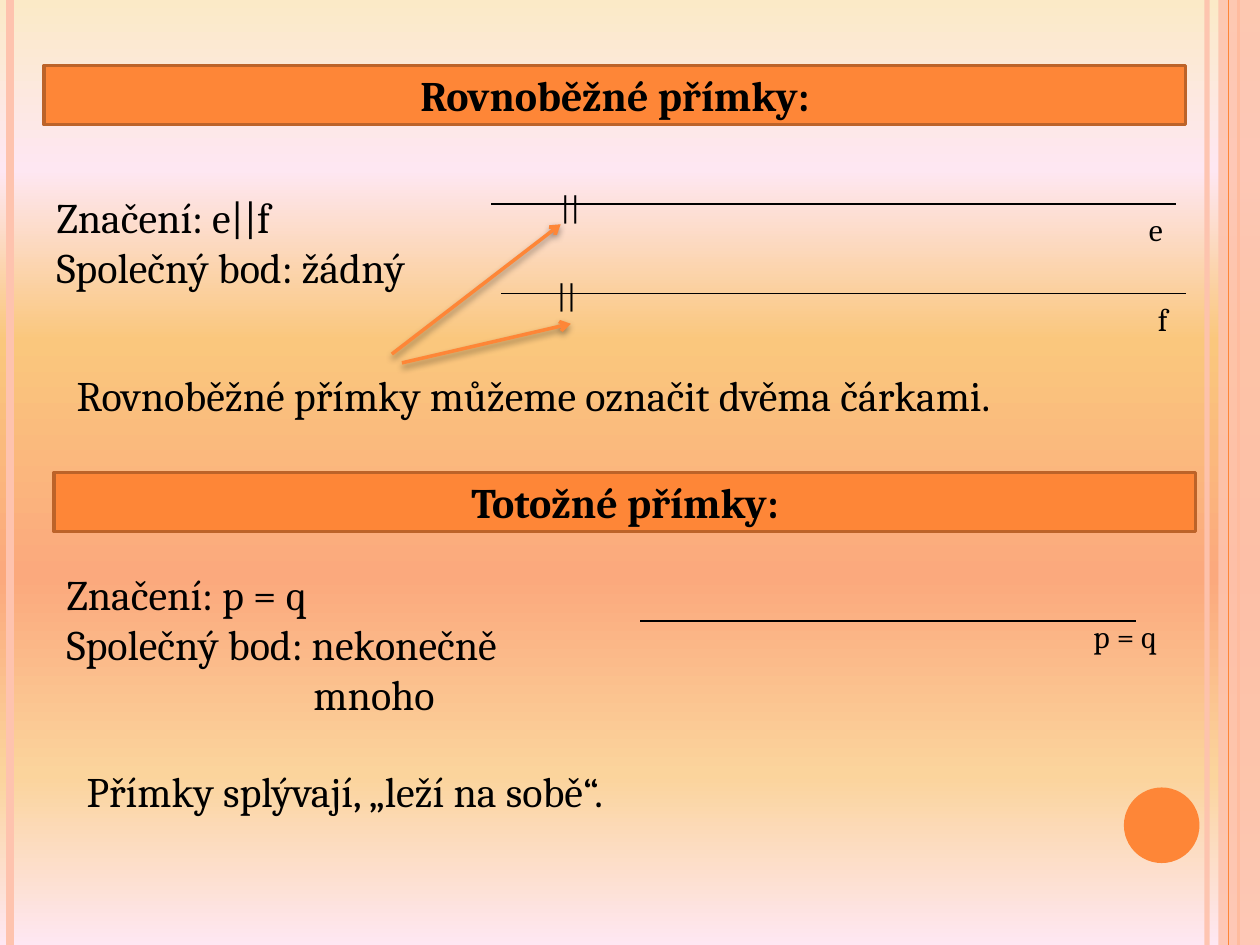
from lxml import etree
from pptx import Presentation
from pptx.dml.color import RGBColor
from pptx.enum.shapes import MSO_CONNECTOR, MSO_SHAPE
from pptx.enum.text import MSO_ANCHOR, PP_ALIGN
from pptx.oxml.ns import qn
from pptx.util import Inches, Pt

STRAIGHT = MSO_CONNECTOR.STRAIGHT
RECT, OVAL = MSO_SHAPE.RECTANGLE, MSO_SHAPE.OVAL
FONT = "Cambria"
ORANGE, PEACH, BROWN, BLACK = "FE8637", "FEC3AE", "BC6329", "000000"
WIDTH, HEIGHT = 10, 7.5

BACKGROUND = [(0, "FBEAC7", 100), (18, "FEE7F2", 100), (36, "FAC77D", 100),
              (61, "FBA97D", 100), (82, "FBD49C", 100), (100, "FEE7F2", 97)]
OUTER_STRIPES = [(9.58, PEACH, 3, 93), (0.08, PEACH, 4.5, 100), (9.83, ORANGE, 1.5, 100)]
INNER_STRIPE = (9.75, ORANGE, 0.75, 100)
HEADERS = [(0.35, 0.52, "Rovnoběžné přímky:"), (0.43, 3.75, "Totožné přímky:")]
LINES = [(3.9, 9.33, 1.62), (3.98, 9.41, 2.33), (5.08, 9.02, 4.93)]
ARROWS = [(3.11, 2.81, 4.45, 1.78), (3.19, 2.88, 4.53, 2.57)]
LABELS = [(4.32, 2.14, 0.63, "||"), (4.35, 1.44, 0.63, "||"), (9.02, 1.62, 0.39, "e"),
          (9.09, 2.33, 0.39, "f"), (8.58, 4.85, 1.42, "p = q")]
NOTES = [
    (0.35, 1.47, 3.31, 0.91, [("Značení: e||f", 0), ("Společný bod: žádný", 0)]),
    (0.51, 2.88, 8.74, 0.5, [("Rovnoběžné přímky můžeme označit dvěma čárkami.", 0)]),
    (0.43, 4.46, 4.17, 1.31, [("Značení: p = q", 0), ("Společný bod: nekonečně", 0),
                              ("mnoho", 1.96)]),
    (0.59, 6.03, 8.74, 0.5, [("Přímky splývají, „leží na sobě“.", 0)]),
]


def rgb(color):
    return RGBColor.from_string(color)


def child(parent, tag, **attrs):
    return etree.SubElement(parent, qn(tag), {k: str(v) for k, v in attrs.items()})


def set_alpha(element, percent):
    if percent < 100:
        child(next(element.iter(qn("a:srgbClr"))), "a:alpha", val=percent * 1000)


def paint_background(s):
    fill = s.background.fill
    fill.gradient()
    fill.gradient_angle = 270
    stops = next(s.element.iter(qn("a:gsLst")))
    for stop in list(stops):
        stops.remove(stop)
    for pos, color, alpha in BACKGROUND:
        stop = child(stops, "a:gs", pos=pos * 1000)
        child(stop, "a:srgbClr", val=color)
        set_alpha(stop, alpha)


def add_line(s, x1, y1, x2, y2, color, width, alpha=100, arrow=False):
    sp = s.shapes.add_connector(STRAIGHT, Inches(x1), Inches(y1), Inches(x2), Inches(y2))
    sp.line.color.rgb = rgb(color)
    sp.line.width = Pt(width)
    props = sp.element.spPr
    set_alpha(props, alpha)
    if arrow:
        child(props.find(qn("a:ln")), "a:tailEnd", type="arrow")
    effects = child(props, "a:effectLst")
    if arrow:
        shadow = child(effects, "a:outerShdw", blurRad=Pt(4), dist=Pt(2),
                       dir=90 * 60000, rotWithShape=0)
        child(shadow, "a:srgbClr", val=BLACK)
        set_alpha(shadow, 40)


def add_stripe(s, x, color, width, alpha):
    add_line(s, x, 0, x, HEIGHT, color, width, alpha)


def add_block(s, kind, x, y, w, h, color, outline=None, alpha=100):
    sp = s.shapes.add_shape(kind, Inches(x), Inches(y), Inches(w), Inches(h))
    sp.shadow.inherit = False
    sp.fill.solid()
    sp.fill.fore_color.rgb = rgb(color)
    set_alpha(sp.element.spPr, alpha)
    if outline:
        sp.line.color.rgb = rgb(outline)
        sp.line.width = Pt(2)
    else:
        sp.line.fill.background()
    return sp


def style(p, size, bold=False):
    p.font.name, p.font.size, p.font.bold = FONT, Pt(size), bold
    p.font.color.rgb = rgb(BLACK)


def add_header(s, x, y, text):
    tf = add_block(s, RECT, x, y, 9.06, 0.47, ORANGE, BROWN).text_frame
    tf.vertical_anchor = MSO_ANCHOR.MIDDLE
    p = tf.paragraphs[0]
    p.text, p.alignment = text, PP_ALIGN.CENTER
    style(p, 24, True)


def add_text(s, x, y, w, h, rows, size):
    tf = s.shapes.add_textbox(Inches(x), Inches(y), Inches(w), Inches(h)).text_frame
    tf.word_wrap = True
    for i, (text, indent) in enumerate(rows):
        p = tf.add_paragraph() if i else tf.paragraphs[0]
        p.text = text
        style(p, size)
        if indent:
            p._p.get_or_add_pPr().set("marL", str(Inches(indent)))


def main():
    prs = Presentation()
    prs.slide_width, prs.slide_height = Inches(WIDTH), Inches(HEIGHT)
    s = prs.slides.add_slide(prs.slide_layouts[6])
    paint_background(s)
    for stripe in OUTER_STRIPES:
        add_stripe(s, *stripe)
    add_block(s, RECT, 9.67, 0, 0.33, HEIGHT, PEACH, alpha=87)
    add_stripe(s, *INNER_STRIPE)
    add_block(s, OVAL, 8.92, 6.25, 0.6, 0.6, ORANGE)
    for header in HEADERS:
        add_header(s, *header)
    for x1, x2, y in LINES:
        add_line(s, x1, y, x2, y, BLACK, 1)
    for x, y, w, text in LABELS:
        add_text(s, x, y, w, 0.4, [(text, 0)], 18)
    for arrow in ARROWS:
        add_line(s, *arrow, ORANGE, 2, arrow=True)
    for x, y, w, h, rows in NOTES:
        add_text(s, x, y, w, h, rows, 24)
    prs.save("out.pptx")


if __name__ == "__main__":
    main()
